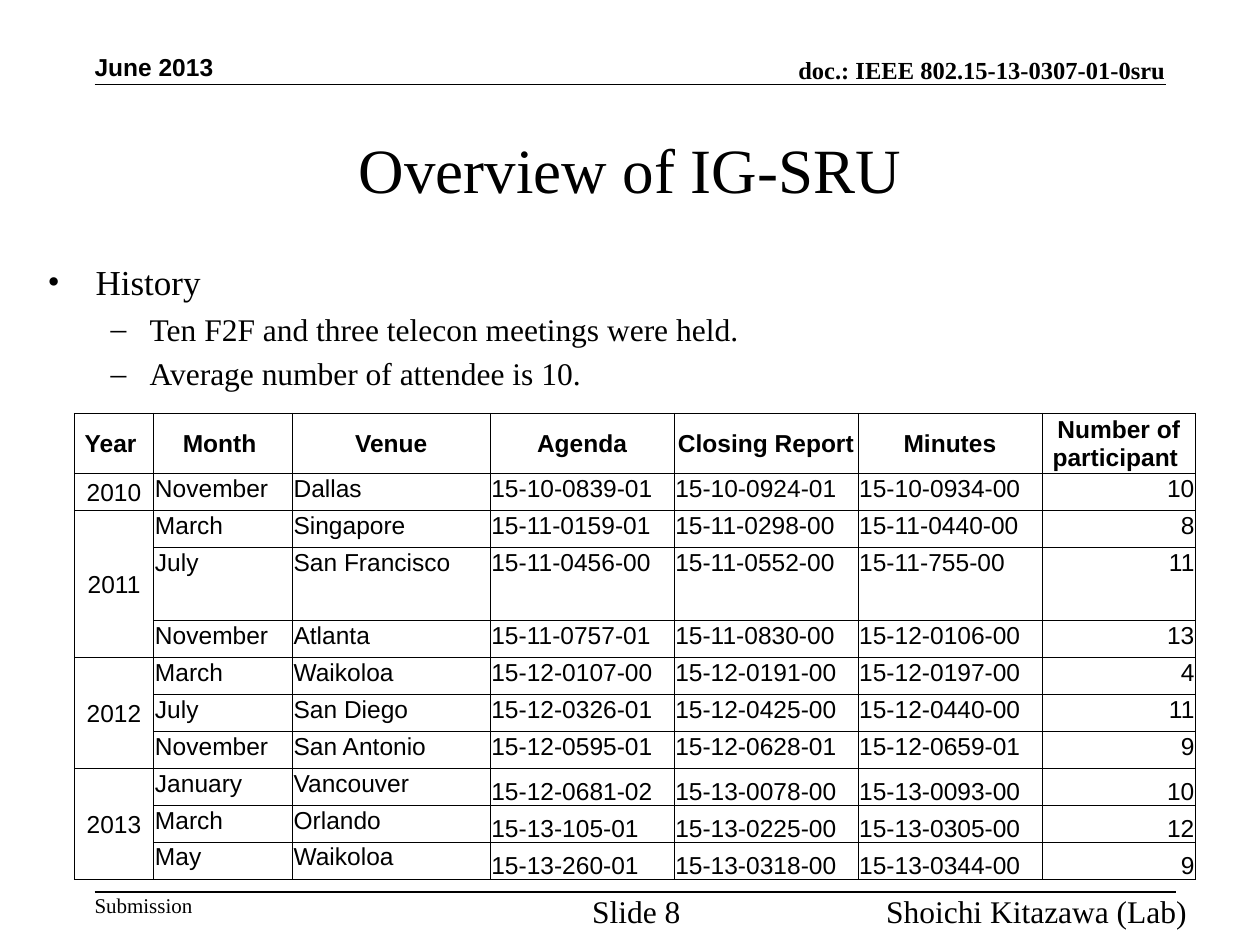
from dataclasses import dataclass
from lxml import etree
from pptx import Presentation
from pptx.dml.color import RGBColor
from pptx.enum.shapes import MSO_CONNECTOR
from pptx.enum.text import MSO_ANCHOR, PP_ALIGN
from pptx.oxml.ns import qn
from pptx.util import Inches, Pt

LEFT, MID, RIGHT = PP_ALIGN.LEFT, PP_ALIGN.CENTER, PP_ALIGN.RIGHT
TOP, CORE, BASE = MSO_ANCHOR.TOP, MSO_ANCHOR.MIDDLE, MSO_ANCHOR.BOTTOM
STRAIGHT = MSO_CONNECTOR.STRAIGHT


@dataclass(frozen=True)
class Theme:
    """Colours, fonts and type sizes of the slide."""
    ink: RGBColor = RGBColor(0, 0, 0)
    paper: RGBColor = RGBColor(255, 255, 255)
    serif: str = "Times New Roman"
    sans: str = "Arial"
    title: int = 36
    head: int = 20
    body: int = 18
    small: int = 14
    tiny: int = 12


THEME = Theme()
COLS = (0.63, 1.1, 1.57, 1.46, 1.46, 1.46, 1.22)
TALL = {0: 0.48, 3: 0.58}
HEADS = ("Year ", "Month ", "Venue", "Agenda", "Closing Report", "Minutes",
         "Number of participant ")
YEARS = {
    "2010": [("November", "Dallas", "15-10-0839-01", "15-10-0924-01", "15-10-0934-00", "10")],
    "2011": [("March", "Singapore", "15-11-0159-01", "15-11-0298-00", "15-11-0440-00", "8"),
             ("July", "San Francisco", "15-11-0456-00", "15-11-0552-00", "15-11-755-00", "11"),
             ("November", "Atlanta", "15-11-0757-01", "15-11-0830-00", "15-12-0106-00", "13")],
    "2012": [("March", "Waikoloa", "15-12-0107-00", "15-12-0191-00", "15-12-0197-00", "4"),
             ("July", "San Diego", "15-12-0326-01", "15-12-0425-00", "15-12-0440-00", "11"),
             ("November", "San Antonio", "15-12-0595-01", "15-12-0628-01", "15-12-0659-01", "9")],
    "2013": [("January", "Vancouver", "15-12-0681-02", "15-13-0078-00", "15-13-0093-00", "10"),
             ("March", "Orlando", "15-13-105-01", "15-13-0225-00", "15-13-0305-00", "12"),
             ("May", "Waikoloa", "15-13-260-01", "15-13-0318-00", "15-13-0344-00", "9")],
}


def write(para, text, size=THEME.body, face=THEME.serif, bold=False, align=LEFT):
    """Put formatted text in a paragraph."""
    para.alignment = align
    run = para.add_run()
    run.text = text
    font = run.font
    font.size, font.name, font.bold = Pt(size), face, bold
    font.color.rgb = THEME.ink


def frame(slide, box, anchor=TOP, pad=(0, 0)):
    """Add a text box and return its text frame."""
    area = slide.shapes.add_textbox(*map(Inches, box)).text_frame
    area.word_wrap, area.vertical_anchor = True, anchor
    area.margin_left = area.margin_right = Inches(pad[0])
    area.margin_top = area.margin_bottom = Inches(pad[1])
    return area


def label(slide, box, text, anchor=TOP, pad=(0, 0), **style):
    """Add a one-paragraph text box."""
    write(frame(slide, box, anchor, pad).paragraphs[0], text, **style)


def rule(slide, left, top, width):
    """Draw a level line."""
    line = slide.shapes.add_connector(
        STRAIGHT, Inches(left), Inches(top), Inches(left + width), Inches(top))
    line.line.color.rgb, line.line.width = THEME.ink, Pt(1)
    etree.SubElement(line._element.spPr, qn("a:effectLst"))


def header(slide, left, top, width, height):
    """Place the date and document number above a line."""
    bold = {"size": THEME.small, "bold": True, "anchor": BASE}
    label(slide, (left, top, 1.75, height - 0.02), "June 2013", face=THEME.sans, **bold)
    label(slide, (left + width - 4.33, top, 4.33, height),
          "doc.: IEEE 802.15-13-0307-01-0sru", align=RIGHT, **bold)
    rule(slide, left, top + height, width)


def footer(slide, left, top, width, height):
    """Place the closing line, slide number and author."""
    rule(slide, left, top, width)
    label(slide, (left, top, 0.78, height), "Submission", size=THEME.tiny)
    label(slide, (left + 3.8, top, 1, height), "Slide 8", align=MID)
    label(slide, (left + 5.25, top, 3.42, height), "Shoichi Kitazawa (Lab)", align=RIGHT)


def points(slide, box, items):
    """List bulleted items given as level and text."""
    area = frame(slide, box, pad=(0.1, 0.05))
    looks = (("•", 0.38, 0.38, THEME.head), ("–", 0.81, 0.31, THEME.body))
    for num, (level, text) in enumerate(items):
        para = area.add_paragraph() if num else area.paragraphs[0]
        mark, indent, hang, size = looks[level]
        para.level = level
        if num:
            para.space_before = Pt(4)
        props = para._p.get_or_add_pPr()
        props.set("marL", str(Inches(indent)))
        props.set("indent", str(-Inches(hang)))
        etree.SubElement(props, qn("a:buFont"), typeface=THEME.serif)
        etree.SubElement(props, qn("a:buChar"), char=mark)
        para.font.size = Pt(size)
        write(para, text, size=size)


def edge(cell):
    """Give a cell thin borders on every side."""
    props = cell._tc.get_or_add_tcPr()
    for num, side in enumerate(("lnL", "lnR", "lnT", "lnB")):
        line = etree.Element(qn("a:" + side), w=str(Pt(0.5)))
        paint = etree.SubElement(line, qn("a:solidFill"))
        etree.SubElement(paint, qn("a:srgbClr"), val=str(THEME.ink))
        props.insert(num, line)


def fill(cell, text, anchor=TOP, **style):
    """Format one table cell and write its text."""
    cell.margin_left = cell.margin_right = cell.margin_top = Inches(0.01)
    cell.margin_bottom = 0
    cell.vertical_anchor = anchor
    cell.fill.solid()
    cell.fill.fore_color.rgb = THEME.paper
    edge(cell)
    if text:
        write(cell.text_frame.paragraphs[0], text,
              size=THEME.small, face=THEME.sans, **style)


def meetings(slide, box):
    """Build the table of meetings grouped by year."""
    count = 1 + sum(map(len, YEARS.values()))
    grid = slide.shapes.add_table(count, len(COLS), *map(Inches, box)).table
    grid.first_row = grid.horz_banding = False
    for col, width in zip(grid.columns, COLS):
        col.width = Inches(width)
    pitch = (box[3] - sum(TALL.values())) / (count - len(TALL))
    for num, row in enumerate(grid.rows):
        row.height = Inches(TALL.get(num, pitch))
    for col, text in enumerate(HEADS):
        fill(grid.cell(0, col), text, CORE, bold=True, align=MID)
    top = 1
    for year, rows in YEARS.items():
        for num, items in enumerate(rows):
            fill(grid.cell(top + num, 0), "" if num else year, CORE, align=MID)
            for col, text in enumerate(items, 1):
                low = year == "2013" and col > 2
                fill(grid.cell(top + num, col), text, BASE if low else TOP,
                     align=RIGHT if col == len(items) else LEFT)
        if len(rows) > 1:
            grid.cell(top, 0).merge(grid.cell(top + len(rows) - 1, 0))
        top += len(rows)


def main():
    """Build and save the slide."""
    deck = Presentation()
    deck.slide_width, deck.slide_height = Inches(10), Inches(7.5)
    slide = deck.slides.add_slide(deck.slide_layouts[6])
    header(slide, 0.75, 0.43, 8.5, 0.24)
    footer(slide, 0.75, 7.08, 8.58, 0.2)
    label(slide, (0.75, 0.75, 8.5, 1.17), "Overview of IG-SRU", CORE, (0.1, 0.05),
          size=THEME.title, align=MID)
    meetings(slide, (0.59, 3.28, 8.9, 3.7))
    points(slide, (0.28, 2.02, 9.45, 1.26), (
        (0, "History"),
        (1, "Ten F2F and three telecon meetings were held."),
        (1, "Average number of attendee is 10.")))
    deck.save("out.pptx")


if __name__ == "__main__":
    main()
